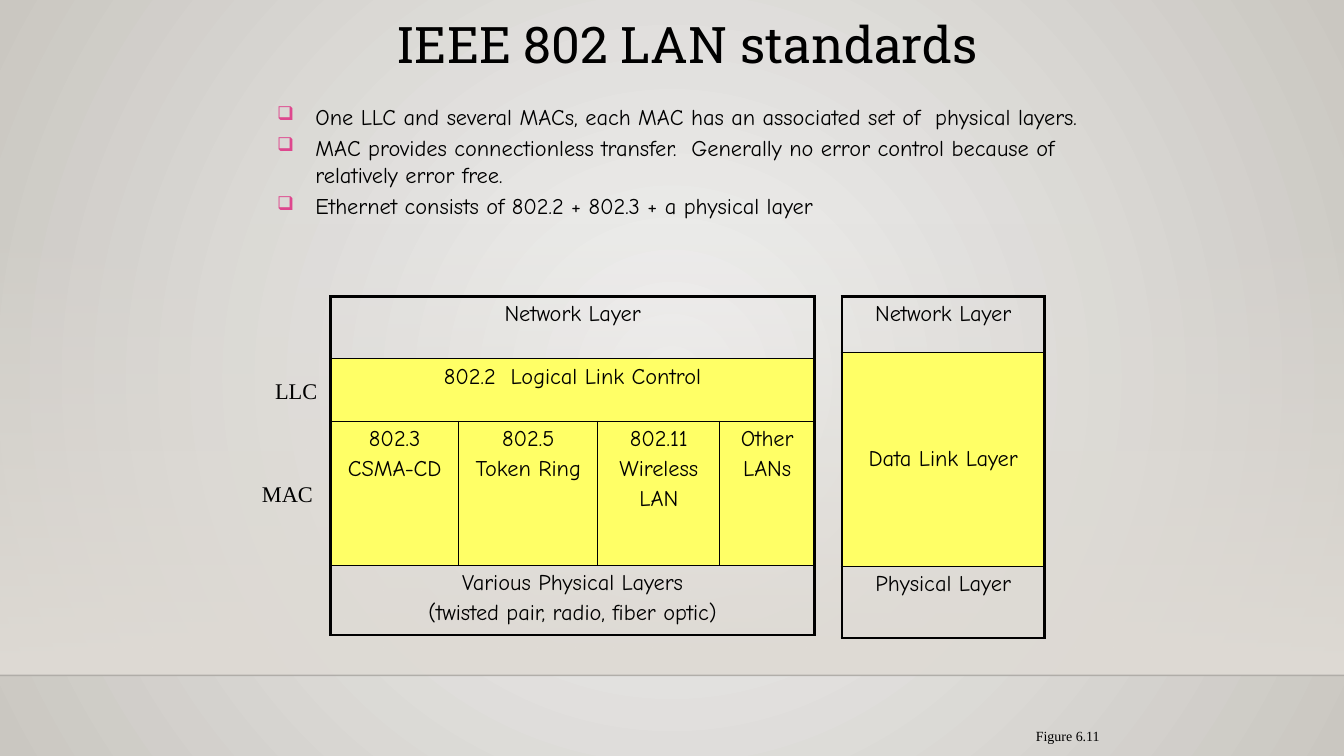
"""Build a slide on the IEEE 802 LAN standards with two layer stacks."""
import pptx
import pptx.dml.color
import pptx.enum.shapes
import pptx.enum.text
import pptx.oxml
import pptx.oxml.ns
import pptx.util
from dataclasses import dataclass

TITLE = "IEEE 802 LAN standards"
POINTS = [
    "One LLC and several MACs, each MAC has an associated set of  physical layers.",
    "MAC provides connectionless transfer.  Generally no error control because of relatively error free.",
    "Ethernet consists of 802.2 + 802.3 + a physical layer",
]
CAPTION = "Figure 6.11"
STANDARDS = {
    "at": (3.28, 2.94), "cols": [1.27, 1.38, 1.21, 0.94], "rows": [0.62, 0.62, 1.43, 0.69],
    "layers": [
        [["Network Layer"]],
        [["802.2  Logical Link Control"]],
        [["802.3", "CSMA-CD"], ["802.5", "Token Ring"], ["802.11", "Wireless", "LAN"], ["Other", "LANs"]],
        [["Various Physical Layers", "(twisted pair, radio, fiber optic)"]],
    ],
    "link_rows": (1, 2), "centred_rows": (),
}
OSI = {
    "at": (8.35, 2.94), "cols": [2.01], "rows": [0.56, 2.12, 0.71],
    "layers": [[["Network Layer"]], [["Data Link Layer"]], [["Physical Layer"]]],
    "link_rows": (1,), "centred_rows": (1,),
}
SUBLAYERS = [("LLC", 2.63, 0.62, 1), ("MAC", 2.5, 0.71, 2)]
WIDTH, HEIGHT, FLOOR, HAZE_TOP = 13.33, 7.5, 6.7, 2.21


@dataclass(frozen=True)
class Theme:
    ink: str = "000000"
    link: str = "FFFF66"
    bullet: str = "DE478E"
    haze: str = "DFDBD5"
    glow: str = "F2F2F2"
    rim: str = "CAC7C1"
    heading: str = "Roboto Slab"
    body: str = "Comic Neue"
    label: str = "Times New Roman"
    title_size: int = 36
    body_size: int = 16
    caption_size: int = 10
    outer: float = 2.25
    inner: float = 1


THEME = Theme()
ALIGN = pptx.enum.text.PP_ALIGN
ANCHOR = pptx.enum.text.MSO_ANCHOR
inch = pptx.util.Inches
rgb = pptx.dml.color.RGBColor.from_string
qn = pptx.oxml.ns.qn


def element(xml):
    tag, rest = xml.split(" ", 1) if " " in xml.split(">")[0] else (xml.rstrip("/>"), "/>")
    return pptx.oxml.parse_xml(f"{tag} {pptx.oxml.ns.nsdecls('a')} {rest}")


def write(frame, lines, font, size, align=ALIGN.LEFT, bulleted=False):
    for index, line in enumerate(lines):
        paragraph = frame.paragraphs[0] if index == 0 else frame.add_paragraph()
        paragraph.alignment = align
        if index:
            paragraph.space_before = pptx.util.Pt(size * 0.2)
        if bulleted:
            props = paragraph._p.get_or_add_pPr()
            props.set("marL", str(inch(0.38)))
            props.set("indent", str(-inch(0.38)))
            props.append(element(f'<a:buClr ><a:srgbClr val="{THEME.bullet}"/></a:buClr>'))
            props.append(element('<a:buSzPct val="85000"/>'))
            props.append(element('<a:buChar char="❑"/>'))
        run = paragraph.add_run()
        run.text = line
        run.font.name = font
        run.font.size = pptx.util.Pt(size)
        run.font.bold = False
        run.font.color.rgb = rgb(THEME.ink)


def add_text(slide, box, lines, font, size, wrap=False, **style):
    frame = slide.shapes.add_textbox(*map(inch, box)).text_frame
    frame.word_wrap = wrap
    write(frame, lines, font, size, **style)
    return frame


def set_gradient(fill, colours):
    fill.gradient()
    for stop, colour in zip(fill.gradient_stops, colours):
        stop.color.rgb = rgb(colour)


def set_alpha(colour, percent):
    colour.append(element(f'<a:alpha val="{percent * 1000}"/>'))


def add_backdrop(slide):
    fill = slide.background.fill
    set_gradient(fill, (THEME.glow, THEME.rim))
    gradient = next(slide._element.iter(qn("a:gradFill")))
    gradient.replace(gradient.find(qn("a:lin")), element(
        '<a:path path="circle"><a:fillToRect l="50000" t="50000" r="50000" b="50000"/></a:path>'))
    haze = slide.shapes.add_shape(pptx.enum.shapes.MSO_SHAPE.RECTANGLE, 0, inch(HAZE_TOP),
                                  inch(WIDTH), inch(FLOOR - HAZE_TOP))
    haze.shadow.inherit = False
    haze.line.fill.background()
    set_gradient(haze.fill, (THEME.haze, THEME.haze))
    haze.fill.gradient_angle = 270
    set_alpha(next(haze._element.spPr.iter(qn("a:srgbClr"))), 0)
    floor = slide.shapes.add_connector(pptx.enum.shapes.MSO_CONNECTOR.STRAIGHT,
                                       0, inch(FLOOR), inch(WIDTH), inch(FLOOR))
    floor.line.color.rgb = rgb(THEME.ink)
    floor.line.width = pptx.util.Pt(1)
    set_alpha(next(floor._element.spPr.iter(qn("a:srgbClr"))), 20)
    floor._element.spPr.append(element("<a:effectLst/>"))


def set_borders(cell, widths):
    props = cell._tc.get_or_add_tcPr()
    for index, (side, width) in enumerate(zip("LRTB", widths)):
        props.insert(index, element(
            f'<a:ln{side} w="{pptx.util.Pt(width)}"><a:solidFill><a:srgbClr val="{THEME.ink}"/>'
            f'</a:solidFill><a:prstDash val="solid"/></a:ln{side}>'))


def add_stack(slide, stack):
    cols, rows = stack["cols"], stack["rows"]
    size = (sum(cols), sum(rows))
    table = slide.shapes.add_table(len(rows), len(cols), *map(inch, stack["at"] + size)).table
    table.first_row = table.horz_banding = False
    for column, width in zip(table.columns, cols):
        column.width = inch(width)
    for row, height in zip(table.rows, rows):
        row.height = inch(height)
    for r, layer in enumerate(stack["layers"]):
        span = len(cols) // len(layer)
        for c, lines in enumerate(layer):
            cell = table.cell(r, c)
            if span > 1:
                cell.merge(table.cell(r, c + span - 1))
            if r in stack["link_rows"]:
                cell.fill.solid()
                cell.fill.fore_color.rgb = rgb(THEME.link)
            else:
                cell.fill.background()
            cell.vertical_anchor = ANCHOR.MIDDLE if r in stack["centred_rows"] else ANCHOR.TOP
            edges = (c == 0, c + span == len(cols), r == 0, r + 1 == len(rows))
            set_borders(cell, [THEME.outer if edge else THEME.inner for edge in edges])
            write(cell.text_frame, lines, THEME.body, THEME.body_size, ALIGN.CENTER)


def main():
    deck = pptx.Presentation()
    deck.slide_width, deck.slide_height = inch(WIDTH), inch(HEIGHT)
    slide = deck.slides.add_slide(deck.slide_layouts[5])
    add_backdrop(slide)

    title = slide.shapes.title
    title.left, title.top, title.width, title.height = map(inch, (3.83, 0.08, 6.33, 0.7))
    title.text_frame.word_wrap = False
    title.text_frame.auto_size = pptx.enum.text.MSO_AUTO_SIZE.NONE
    title.text_frame.vertical_anchor = ANCHOR.TOP
    write(title.text_frame, [TITLE], THEME.heading, THEME.title_size)

    caption = add_text(slide, (10.17, 7.17, 0.84, 0.27), [CAPTION], THEME.label,
                       THEME.caption_size, align=ALIGN.CENTER)
    caption.vertical_anchor = ANCHOR.MIDDLE
    for name, left, width, row in SUBLAYERS:
        middle = STANDARDS["at"][1] + sum(STANDARDS["rows"][:row]) + STANDARDS["rows"][row] / 2
        add_text(slide, (left, middle - 0.18, width, 0.37), [name], THEME.label, THEME.body_size)
    for stack in (STANDARDS, OSI):
        add_stack(slide, stack)
    add_text(slide, (2.65, 0.97, 8.35, 1.79), POINTS, THEME.body, THEME.body_size,
             wrap=True, bulleted=True)
    deck.save("out.pptx")


if __name__ == "__main__":
    main()
